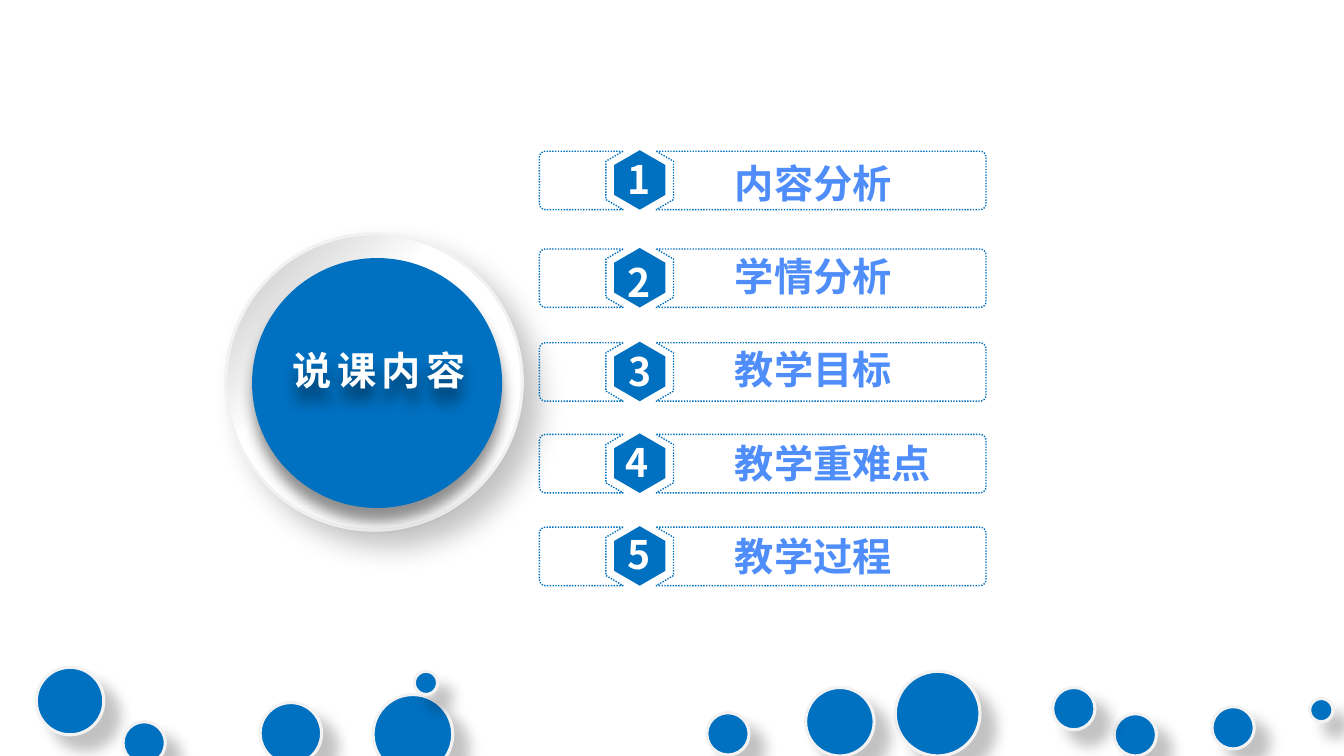
"""Build a contents slide: a round title medallion, five numbered bars and a row of bubbles."""
from math import cos, pi, sin

from lxml import etree
from pptx import Presentation
from pptx.dml.color import RGBColor
from pptx.enum.dml import MSO_LINE
from pptx.enum.shapes import MSO_SHAPE
from pptx.enum.text import MSO_ANCHOR, MSO_AUTO_SIZE, PP_ALIGN
from pptx.oxml.ns import qn
from pptx.util import Inches, Pt

OVAL = MSO_SHAPE.OVAL
DOTTED = MSO_LINE.ROUND_DOT
TOP = MSO_ANCHOR.TOP
LEFT = PP_ALIGN.LEFT
GROW = MSO_AUTO_SIZE.SHAPE_TO_FIT_TEXT

FONT = "Noto Sans CJK SC"
BLUE, LABEL_BLUE, WHITE, RIM, GREY = "0070C0", "4F8EFA", "FFFFFF", "F2F2F2", "BFBFBF"
TEXT_HEIGHT = 0.57

BAR_LEFT, BAR_RIGHT, BAR_HEIGHT, CORNER = 5.35, 9.78, 0.58, 0.06
HEXAGON_X, HEXAGON_HALF, HEXAGON_HEIGHT = 6.345, 0.255, 0.59
NOTCH_INNER, NOTCH_OUTER, NOTCH_DEPTH = 0.165, 0.335, 0.1
LABEL_LEFT, LABEL_TOP, LABEL_PITCH = 7.19, 1.53, 0.925

ROWS = [
    ("内容分析", 1.5, 6.13, 1.49),
    ("学情分析", 2.47, 6.13, 2.51),
    ("教学目标", 3.4, 6.14, 3.4),
    ("教学重难点", 4.31, 6.11, 4.3),
    ("教学过程", 5.23, 6.13, 5.21),
]
BUBBLES = [
    (2.58, 6.97, 0.61), (8.88, 6.66, 0.84), (7.01, 7.07, 0.42), (0.36, 6.62, 0.67),
    (3.7, 6.89, 0.79), (7.99, 6.82, 0.68), (4.11, 6.66, 0.23), (1.22, 7.16, 0.42),
    (11.05, 7.08, 0.42), (12.99, 6.93, 0.23), (10.44, 6.82, 0.42), (12.02, 7.01, 0.42),
]


def cast_shadow(shape, opacity, blur, distance, angle):
    """Give a shape a soft black outer shadow."""
    shape.shadow.inherit = False
    effects = shape._element.spPr.find(qn("a:effectLst"))
    shadow = etree.SubElement(
        effects, qn("a:outerShdw"), blurRad=str(Pt(blur)), dist=str(Pt(distance)),
        dir=str(angle * 60000), algn="ctr", rotWithShape="0")
    black = etree.SubElement(shadow, qn("a:srgbClr"), val="000000")
    etree.SubElement(black, qn("a:alpha"), val=str(opacity * 1000))


def write_text(shape, text, color, wrap):
    """Fill a box with one bold line and return the paragraph's font properties."""
    frame = shape.text_frame
    frame.text = text
    frame.word_wrap = wrap
    frame.auto_size = GROW
    frame.vertical_anchor = TOP
    paragraph = frame.paragraphs[0]
    paragraph.alignment = LEFT
    font = paragraph.font
    font.name, font.size, font.bold = FONT, Pt(28), True
    font.color.rgb = RGBColor.from_string(color)
    properties = paragraph._p.pPr.find(qn("a:defRPr"))
    etree.SubElement(properties, qn("a:ea"), typeface=FONT)
    return properties


presentation = Presentation()
presentation.slide_width, presentation.slide_height = Inches(13.33), Inches(7.5)
slide = presentation.slides.add_slide(presentation.slide_layouts[5])
shapes = slide.shapes

ring = shapes.add_shape(OVAL, Inches(2.24), Inches(2.32), Inches(2.94), Inches(2.94))
cast_shadow(ring, 23, 20, 15, 45)
ring.fill.gradient()
ring.fill.gradient_angle = 315
for stop, position, color in zip(ring.fill.gradient_stops, (0, 0.37), (GREY, WHITE)):
    stop.position = position
    stop.color.rgb = RGBColor.from_string(color)
ring.line.color.rgb = RGBColor.from_string(RIM)
ring.line.width = Pt(2.25)

disc = shapes.add_shape(OVAL, Inches(2.5), Inches(2.56), Inches(2.48), Inches(2.48))
cast_shadow(disc, 43, 10, 10, 90)
disc.fill.solid()
disc.fill.fore_color.rgb = RGBColor.from_string(BLUE)
disc.line.fill.background()

for left, top, size in BUBBLES:
    bubble = shapes.add_shape(OVAL, Inches(left), Inches(top), Inches(size), Inches(size))
    cast_shadow(bubble, 23, 10, 15, 45)
    bubble.fill.solid()
    bubble.fill.fore_color.rgb = RGBColor.from_string(BLUE)
    bubble.line.color.rgb = RGBColor.from_string(RIM)
    bubble.line.width = Pt(2.25)

title = shapes.title
title.left, title.top, title.width, title.height = (
    Inches(2.8), Inches(3.39), Inches(2), Inches(TEXT_HEIGHT))
write_text(title, "说课内容", WHITE, False).set("spc", "400")
cast_shadow(title, 43, 10, 10, 90)
shapes._spTree.append(title._element)

for index, (label, top, number_left, number_top) in enumerate(ROWS):
    row = shapes.add_group_shape()
    bottom = top + BAR_HEIGHT
    builder = None
    for edge, side in ((BAR_LEFT, -1), (BAR_RIGHT, 1)):
        inner, outer = HEXAGON_X + side * NOTCH_INNER, HEXAGON_X + side * NOTCH_OUTER
        outline = [(inner, top), (outer, top + NOTCH_DEPTH),
                   (outer, bottom - NOTCH_DEPTH), (inner, bottom)]
        for step in range(10):
            angle = step % 5 * pi / 8 + step // 5 * pi / 2
            center_y = bottom - CORNER if step < 5 else top + CORNER
            outline.append((edge - side * CORNER * (1 - sin(angle)),
                            center_y + CORNER * cos(angle)))
        points = [(Inches(x), Inches(y)) for x, y in outline]
        if builder is None:
            builder = row.shapes.build_freeform(*points[0])
        else:
            builder.move_to(*points[0])
        builder.add_line_segments(points[1:], close=True)
    bar = builder.convert_to_shape()
    bar.shadow.inherit = False
    bar.fill.background()
    bar.line.color.rgb = RGBColor.from_string(BLUE)
    bar.line.width = Pt(1)
    bar.line.dash_style = DOTTED

    corners = [(0, 0), (1, 0.25), (1, 0.75), (0, 1), (-1, 0.75), (-1, 0.25)]
    points = [(Inches(HEXAGON_X + x * HEXAGON_HALF), Inches(top - 0.01 + y * HEXAGON_HEIGHT))
              for x, y in corners]
    builder = row.shapes.build_freeform(*points[0])
    builder.add_line_segments(points[1:], close=True)
    hexagon = builder.convert_to_shape()
    hexagon.shadow.inherit = False
    hexagon.fill.solid()
    hexagon.fill.fore_color.rgb = RGBColor.from_string(BLUE)
    hexagon.line.fill.background()

    number = row.shapes.add_textbox(
        Inches(number_left), Inches(number_top), Inches(0.77), Inches(TEXT_HEIGHT))
    write_text(number, str(index + 1), WHITE, True)

    label_box = shapes.add_textbox(
        Inches(LABEL_LEFT), Inches(LABEL_TOP + index * LABEL_PITCH),
        Inches(2.35), Inches(TEXT_HEIGHT))
    write_text(label_box, label, LABEL_BLUE, True)

presentation.save("out.pptx")
